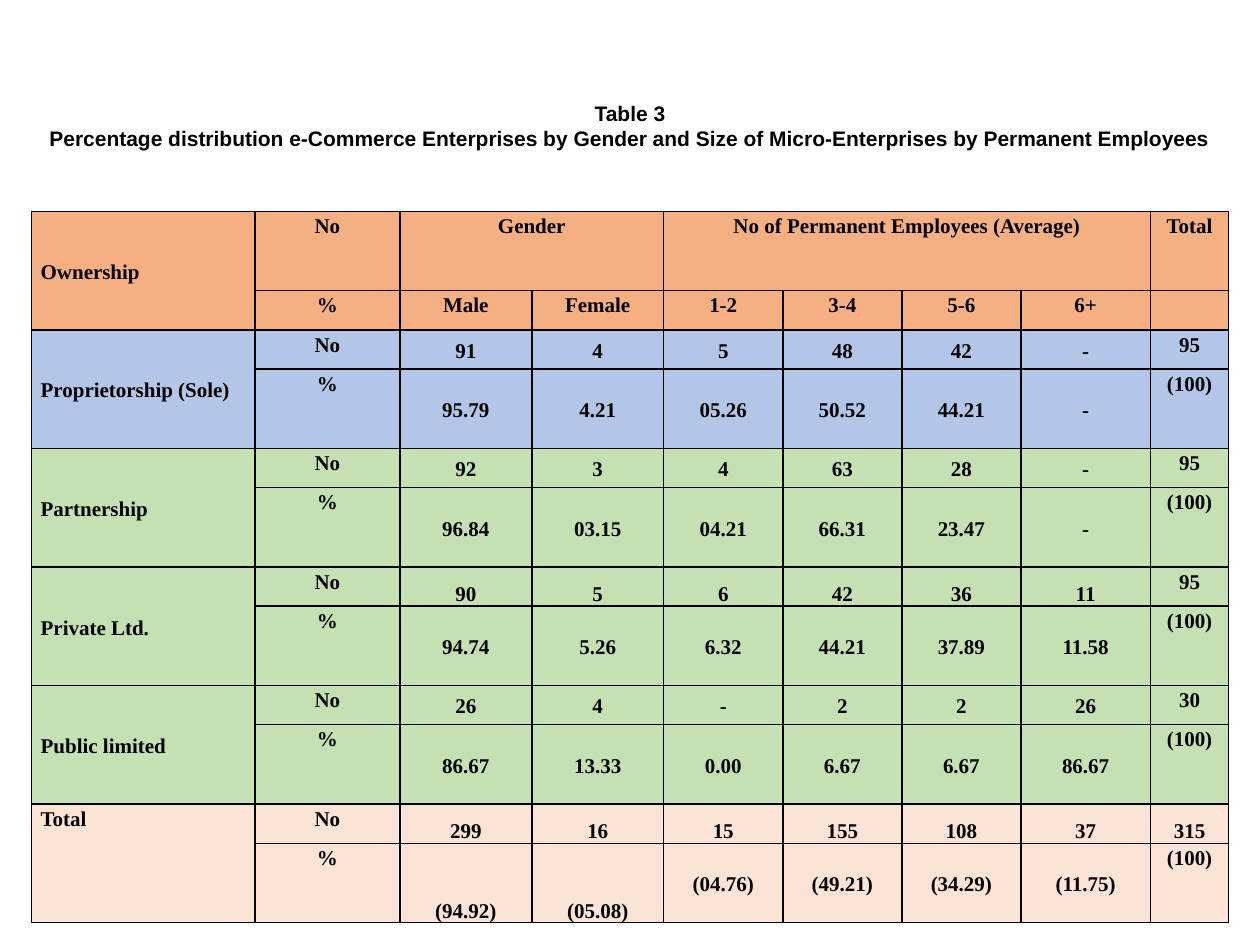
import pptx
import pptx.dml.color
import pptx.enum.text
import pptx.oxml
import pptx.oxml.ns
import pptx.util
from pptx.util import Cm

ALIGN = pptx.enum.text.PP_ALIGN
ANCHORS = {
    "t": pptx.enum.text.MSO_ANCHOR.TOP,
    "m": pptx.enum.text.MSO_ANCHOR.MIDDLE,
    "b": pptx.enum.text.MSO_ANCHOR.BOTTOM,
}
BLACK = "000000"
HEADER_FILL = "F4B083"
COLUMN_WIDTHS = [4.5, 2.92, 2.66, 2.66, 2.4, 2.4, 2.4, 2.61, 1.58]
TALL_ROW, SHORT_ROW = 1.6, 0.79
TITLE_LINES = [
    "Table 3",
    "Percentage distribution e-Commerce Enterprises by Gender and Size of "
    "Micro-Enterprises by Permanent Employees",
]
HEADER_MERGES = [(0, 2, 0, 3), (0, 4, 0, 7)]
HEADINGS = [
    ["Ownership", "No", "Gender", "", "No of Permanent Employees (Average)", "", "", "", "Total"],
    ["", "%", "Male", "Female", "1-2", "3-4", "5-6", "6+", ""],
]
OWNERSHIP_GROUPS = [
    ("Proprietorship (Sole)", "B4C6E7",
     ["91", "4", "5", "48", "42", "-", "95"],
     ["95.79", "4.21", "05.26", "50.52", "44.21", "-", "(100)"],
     "mtmmmmmmt", "mtmmmmmmt"),
    ("Partnership", "C5E0B3",
     ["92", "3", "4", "63", "28", "-", "95"],
     ["96.84", "03.15", "04.21", "66.31", "23.47", "-", "(100)"],
     "mtmmmmmmt", "mtmmmmmmt"),
    ("Private Ltd.", "C5E0B3",
     ["90", "5", "6", "42", "36", "11", "95"],
     ["94.74", "5.26", "6.32", "44.21", "37.89", "11.58", "(100)"],
     "mtbbbbbbt", "mtmmmmmmt"),
    ("Public limited", "C5E0B3",
     ["26", "4", "-", "2", "2", "26", "30"],
     ["86.67", "13.33", "0.00", "6.67", "6.67", "86.67", "(100)"],
     "mtmmmmmmt", "mtmmmmmmt"),
    ("Total", "FBE4D5",
     ["299", "16", "15", "155", "108", "37", "315"],
     ["(94.92)", "(05.08)", "(04.76)", "(49.21)", "(34.29)", "(11.75)", "(100)"],
     "ttbbbbbbb", "ttbbmmmmt"),
]


def rgb(value):
    return pptx.dml.color.RGBColor.from_string(value)


def add_bold_run(paragraph, text, font_name):
    run = paragraph.add_run()
    run.text = text
    run.font.name = font_name
    run.font.size = pptx.util.Pt(12)
    run.font.bold = True
    run.font.color.rgb = rgb(BLACK)


def format_title(title):
    title.left, title.top, title.width, title.height = Cm(0), Cm(1.9), Cm(25.4), Cm(1.27)
    frame = title.text_frame
    frame.auto_size = pptx.enum.text.MSO_AUTO_SIZE.NONE
    frame.word_wrap = False
    frame.vertical_anchor = ANCHORS["m"]
    for index, line in enumerate(TITLE_LINES):
        paragraph = frame.add_paragraph() if index else frame.paragraphs[0]
        paragraph.alignment = ALIGN.CENTER
        add_bold_run(paragraph, line, "Arial")


def add_borders(cell):
    properties = cell._tc.get_or_add_tcPr()
    for side in ("lnL", "lnR", "lnT", "lnB"):
        properties.append(pptx.oxml.parse_xml(
            f'<a:{side} {pptx.oxml.ns.nsdecls("a")} w="12700"><a:solidFill>'
            f'<a:srgbClr val="{BLACK}"/></a:solidFill></a:{side}>'))


def format_cell(cell, text, fill, anchor, alignment):
    add_borders(cell)
    cell.fill.solid()
    cell.fill.fore_color.rgb = rgb(fill)
    cell.margin_left = cell.margin_right = Cm(0.18)
    cell.margin_top = cell.margin_bottom = Cm(0)
    cell.vertical_anchor = ANCHORS[anchor]
    if text:
        paragraph = cell.text_frame.paragraphs[0]
        paragraph.alignment = alignment
        paragraph.line_spacing = 1.15
        add_bold_run(paragraph, text, "Times New Roman")


def table_rows():
    yield HEADINGS[0], HEADER_FILL, "mtttttttt", TALL_ROW
    yield HEADINGS[1], HEADER_FILL, "ttttttttt", SHORT_ROW
    for owner, fill, counts, shares, count_anchors, share_anchors in OWNERSHIP_GROUPS:
        yield [owner, "No"] + counts, fill, count_anchors, SHORT_ROW
        yield ["", "%"] + shares, fill, share_anchors, TALL_ROW


def add_ownership_table(slide):
    rows = list(table_rows())
    height = sum(row[3] for row in rows)
    table = slide.shapes.add_table(
        len(rows), len(COLUMN_WIDTHS), Cm(0.64), Cm(4.26),
        Cm(sum(COLUMN_WIDTHS)), Cm(height)).table
    table.first_row = False
    table.horz_banding = False
    for column, width in zip(table.columns, COLUMN_WIDTHS):
        column.width = Cm(width)
    for row_index, (texts, fill, anchors, row_height) in enumerate(rows):
        table.rows[row_index].height = Cm(row_height)
        for column_index, (text, anchor) in enumerate(zip(texts, anchors)):
            alignment = ALIGN.CENTER if column_index else ALIGN.LEFT
            format_cell(table.cell(row_index, column_index), text, fill, anchor, alignment)
    owner_merges = [(top, 0, top + 1, 0) for top in range(0, len(rows), 2)]
    for top, left, bottom, right in HEADER_MERGES + owner_merges:
        table.cell(top, left).merge(table.cell(bottom, right))


def main():
    presentation = pptx.Presentation()
    presentation.slide_width = Cm(25.4)
    presentation.slide_height = Cm(19.05)
    slide = presentation.slides.add_slide(presentation.slide_layouts[5])
    format_title(slide.shapes.title)
    add_ownership_table(slide)
    presentation.save("out.pptx")


if __name__ == "__main__":
    main()
